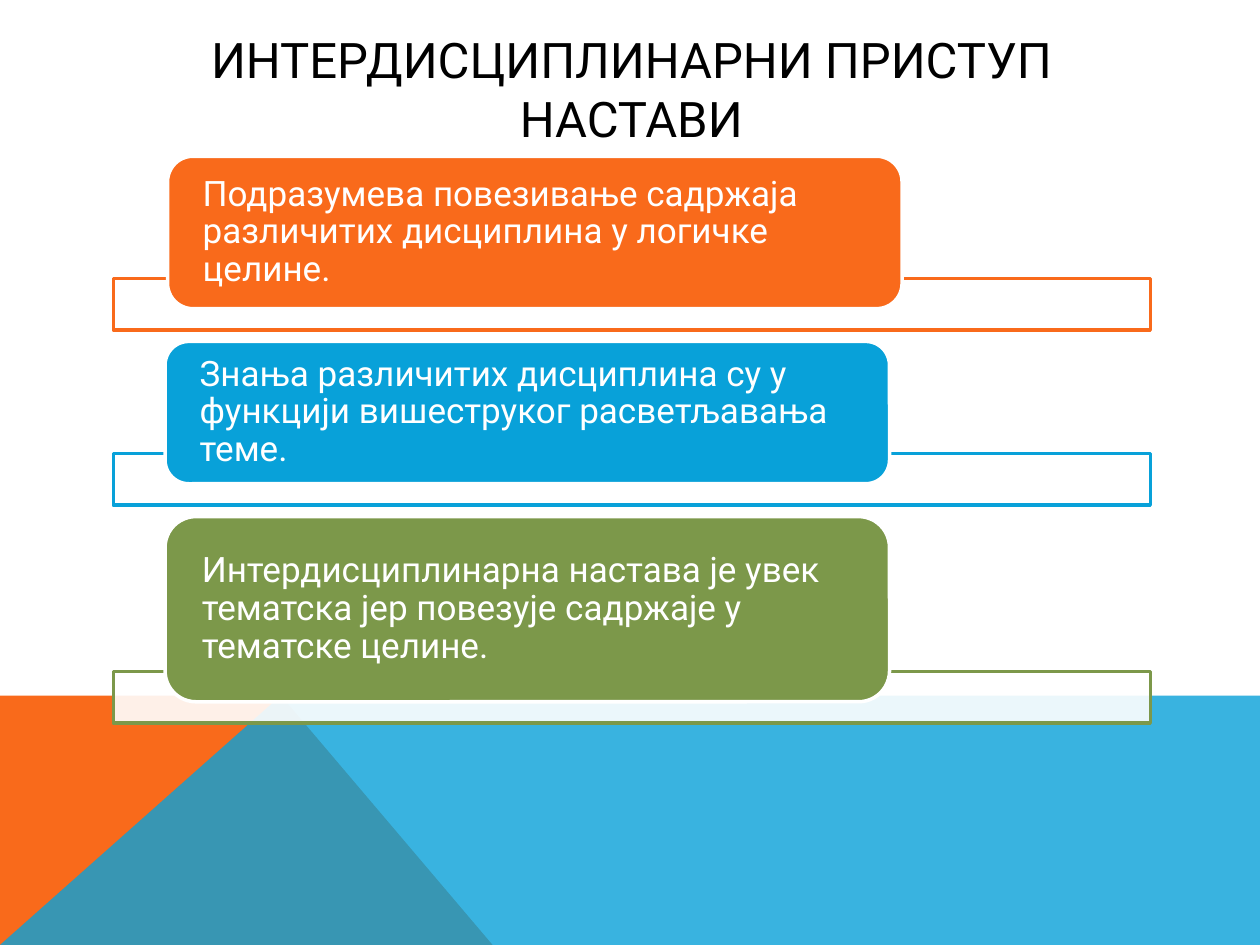
"""Builds a slide on interdisciplinary teaching with three stacked cards."""
from lxml.etree import SubElement
from pptx import Presentation
from pptx.dml.color import RGBColor as Rgb
from pptx.enum.shapes import MSO_SHAPE as Kind
from pptx.enum.text import MSO_ANCHOR as Anchor, MSO_AUTO_SIZE as Auto, PP_ALIGN as Align
from pptx.oxml.ns import qn
from pptx.util import Inches, Pt

TITLE = "ИНТЕРДИСЦИПЛИНАРНИ ПРИСТУП НАСТАВИ"
CARDS = [
    ("Подразумева повезивање садржаја различитих дисциплина у логичке целине.",
     "orange", 1.33, 5.83, 1.21),
    ("Знања различитих дисциплина су у функцији вишеструког расветљавања теме.",
     "blue", 1.31, 5.75, 1.13),
    ("Интердисциплинарна настава је увек тематска јер повезује садржаје у тематске целине.",
     "green", 1.31, 5.75, 1.47),
]
BANDS = [
    ([(0, 7.5), (0, 5.52), (2.23, 5.52), (3.91, 7.5)], "orange", 100),
    ([(0, 7.5), (2.23, 5.52), (10, 5.52), (10, 7.5)], "blue", 80),
]
COLORS = {"orange": "F96A1B", "blue": "08A1D9", "green": "7C984A",
          "white": "FFFFFF", "black": "000000"}
TOP, GAP, LAP = 1.24, 0.09, 0.24
LEFT, WIDTH, BAR = 0.9, 8.23, 0.41
FONT = "Roboto"


def color(name):
    return Rgb.from_string(COLORS[name])


def assign(item, values):
    for key, value in values.items():
        setattr(item, key, value)


def paint(shape, fill, line=None, alpha=100):
    shape.shadow.inherit = False
    shape.fill.solid()
    shape.fill.fore_color.rgb = color(fill)
    if alpha < 100:
        tone = shape.fill._xPr.find(qn("a:solidFill"))[0]
        SubElement(tone, qn("a:alpha"), val=str(alpha * 1000))
    if line:
        shape.line.color.rgb = color(line)
        shape.line.width = Pt(2)
    else:
        shape.line.fill.background()


def write(shape, text, size, tint, para, pad):
    frame = shape.text_frame
    frame.text = text
    assign(frame, {"word_wrap": True, "auto_size": Auto.NONE,
                   "vertical_anchor": Anchor.MIDDLE,
                   "margin_left": Inches(pad), "margin_right": Inches(pad),
                   "margin_top": 0, "margin_bottom": 0})
    first = frame.paragraphs[0]
    assign(first, para)
    assign(first.runs[0].font, {"name": FONT, "size": Pt(size)})
    first.runs[0].font.color.rgb = color(tint)


def add(shapes, kind, *box):
    return shapes.add_shape(kind, *map(Inches, box))


def main():
    deck = Presentation()
    assign(deck, {"slide_width": Inches(10), "slide_height": Inches(7.5)})
    slide = deck.slides.add_slide(deck.slide_layouts[5])
    shapes = slide.shapes

    for points, fill, alpha in BANDS:
        spots = [(Inches(x), Inches(y)) for x, y in points]
        pen = shapes.build_freeform(*spots[0])
        pen.add_line_segments(spots[1:], close=True)
        paint(pen.convert_to_shape(), fill, alpha=alpha)

    title = shapes.title
    assign(title, {"left": Inches(LEFT), "top": Inches(0.4),
                   "width": Inches(8.22), "height": Inches(0.6)})
    write(title, TITLE, 28, "black", {"alignment": Align.CENTER}, 0.1)

    top = TOP
    for text, hue, left, width, height in CARDS:
        base = top + height - LAP
        paint(add(shapes, Kind.RECTANGLE, LEFT, base, WIDTH, BAR), "white", hue, 90)
        card = add(shapes, Kind.ROUNDED_RECTANGLE, left, top, width, height)
        paint(card, hue, "white")
        write(card, text, 20, "white",
              {"alignment": Align.LEFT, "line_spacing": 0.9}, 0.22)
        top = base + BAR + GAP

    deck.save("out.pptx")


if __name__ == "__main__":
    main()
